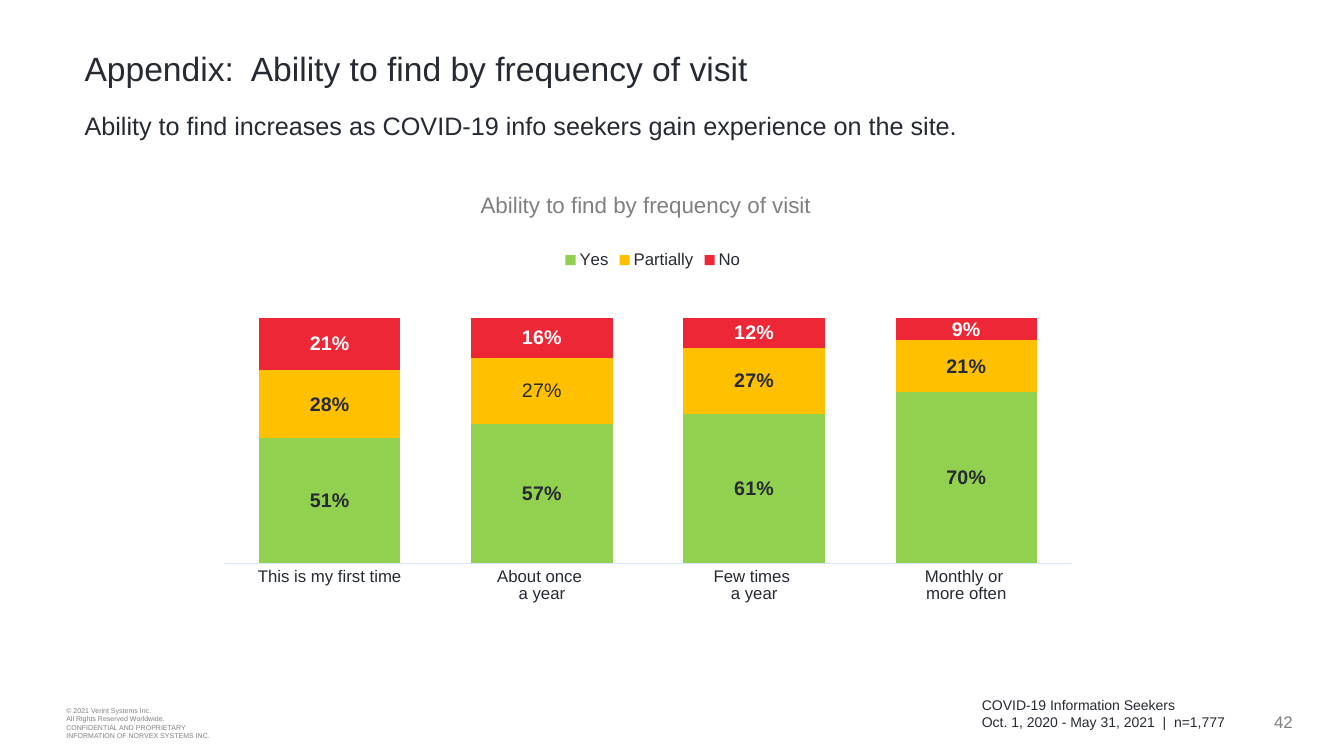
from lxml import etree
from pptx import Presentation
from pptx.chart.data import CategoryChartData
from pptx.dml.color import RGBColor
from pptx.enum import chart as ch, text
from pptx.oxml import ns
from pptx.util import Inches, Pt

# Content
TITLE = "Appendix:  Ability to find by frequency of visit"
TAKEAWAY = "Ability to find increases as COVID-19 info seekers gain experience on the site."
CHART_TITLE = "Ability to find by frequency of visit"
COPYRIGHT = ["© 2021 Verint Systems Inc.", "All Rights Reserved Worldwide.",
             "CONFIDENTIAL AND PROPRIETARY", "INFORMATION OF NORVEX SYSTEMS INC."]
SAMPLE = ["COVID-19 Information Seekers", "Oct. 1, 2020 - May 31, 2021  |  n=1,777"]
PAGE = "42"
VISITS = ["This is my first time", "About once \na year",
          "Few times \na year", "Monthly or \nmore often"]
ANSWERS = [  # name, shares, fill, label colour
    ("Yes", (0.51, 0.57, 0.61, 0.70), "yes", "ink"),
    ("Partially", (0.28, 0.27, 0.27, 0.21), "partially", "ink"),
    ("No", (0.21, 0.16, 0.12, 0.09), "no", "white"),
]
PLAIN_LABEL = ("Partially", 1)  # the one label that is not bold
PLOT = {"x": 0.001, "y": 0.202, "w": 0.987, "h": 0.63}


class Theme:
    font = "Arial"
    colors = {"ink": "262A32", "grey": "808080", "white": "FFFFFF", "axis": "D9EBFF",
              "yes": "92D050", "partially": "FFC000", "no": "EE2737"}
    title, takeaway, chart_title = 24, 18, 16
    label, axis, page, sample, copyright = 14, 12, 12, 10, 5


def rgb(name):
    return RGBColor.from_string(Theme.colors[name])


def set_font(font, size, color="ink", bold=False):
    font.name, font.size, font.bold = Theme.font, Pt(size), bold
    font.color.rgb = rgb(color)


def add_text(slide, lines, box, size, color="ink", align="LEFT", anchor="TOP", inset=0.05):
    tf = slide.shapes.add_textbox(*map(Inches, box)).text_frame
    tf.word_wrap = True
    tf.vertical_anchor = getattr(text.MSO_ANCHOR, anchor)
    tf.margin_top = tf.margin_bottom = Inches(inset)
    for i, line in enumerate([lines] if isinstance(lines, str) else lines):
        p = tf.paragraphs[0] if i == 0 else tf.add_paragraph()
        p.alignment = getattr(text.PP_ALIGN, align)
        r = p.add_run()
        r.text = line
        set_font(r.font, size, color)


def set_plot_layout(chart):
    plot_area = chart._chartSpace.chart.plotArea
    for old in plot_area.findall(ns.qn("c:layout")):
        plot_area.remove(old)
    layout = etree.Element(ns.qn("c:layout"))
    manual = etree.SubElement(layout, ns.qn("c:manualLayout"))
    values = {"layoutTarget": "inner", "xMode": "edge", "yMode": "edge", **PLOT}
    for tag, val in values.items():
        etree.SubElement(manual, ns.qn(f"c:{tag}")).set("val", str(val))
    plot_area.insert(0, layout)


def add_answer_chart(slide, box):
    data = CategoryChartData(number_format="0%")
    data.categories = VISITS
    for name, shares, _, _ in ANSWERS:
        data.add_series(name, shares)
    chart = slide.shapes.add_chart(
        ch.XL_CHART_TYPE.COLUMN_STACKED_100, *map(Inches, box), data).chart
    set_font(chart.font, Theme.axis)
    chart.has_title = False

    # Legend and axes
    chart.has_legend = True
    chart.legend.position = ch.XL_LEGEND_POSITION.TOP
    chart.legend.include_in_layout = False
    set_font(chart.legend.font, Theme.axis)
    visits, shares_axis = chart.category_axis, chart.value_axis
    visits.major_tick_mark = visits.minor_tick_mark = ch.XL_TICK_MARK.NONE
    visits.format.line.color.rgb = rgb("axis")
    visits.format.line.width = Pt(0.75)
    set_font(visits.tick_labels.font, Theme.axis)
    shares_axis.has_major_gridlines = False
    shares_axis.minimum_scale, shares_axis.maximum_scale = 0, 1
    shares_axis.visible = False

    # Columns and their labels
    plot = chart.plots[0]
    plot.gap_width, plot.overlap, plot.vary_by_categories = 50, 100, False
    for series, (name, shares, fill, label_color) in zip(plot.series, ANSWERS):
        series.format.fill.solid()
        series.format.fill.fore_color.rgb = rgb(fill)
        labels = series.data_labels
        labels.show_value = True
        labels.number_format, labels.number_format_is_linked = "0%", False
        labels.position = ch.XL_LABEL_POSITION.CENTER
        set_font(labels.font, Theme.label, label_color, bold=True)
        if name == PLAIN_LABEL[0]:
            point = PLAIN_LABEL[1]
            label = series.points[point].data_label
            r = label.text_frame.paragraphs[0].add_run()
            r.text = f"{shares[point]:.0%}"
            set_font(r.font, Theme.label, label_color)
            label.position = ch.XL_LABEL_POSITION.CENTER
    set_plot_layout(chart)


def main():
    prs = Presentation()
    prs.slide_width, prs.slide_height = Inches(13.33), Inches(7.5)
    s = prs.slides.add_slide(prs.slide_layouts[6])

    # Headings
    add_text(s, TITLE, (0.74, 0.19, 12, 0.73), Theme.title, anchor="BOTTOM")
    add_text(s, TAKEAWAY, (0.74, 1.05, 11.84, 0.4), Theme.takeaway)
    add_text(s, CHART_TITLE, (2.4, 1.85, 8.01, 0.37), Theme.chart_title, "grey", "CENTER")

    # Chart
    add_answer_chart(s, (2.21, 2.38, 8.53, 3.86))

    # Footer
    add_text(s, COPYRIGHT, (0.56, 6.94, 2.4, 0.47), Theme.copyright, "grey", anchor="MIDDLE")
    add_text(s, SAMPLE, (9.64, 6.84, 2.85, 0.47), Theme.sample, anchor="MIDDLE", inset=0)
    add_text(s, PAGE, (12.23, 6.93, 0.69, 0.47), Theme.page, "grey", "RIGHT", "MIDDLE")
    prs.save("out.pptx")


if __name__ == "__main__":
    main()
